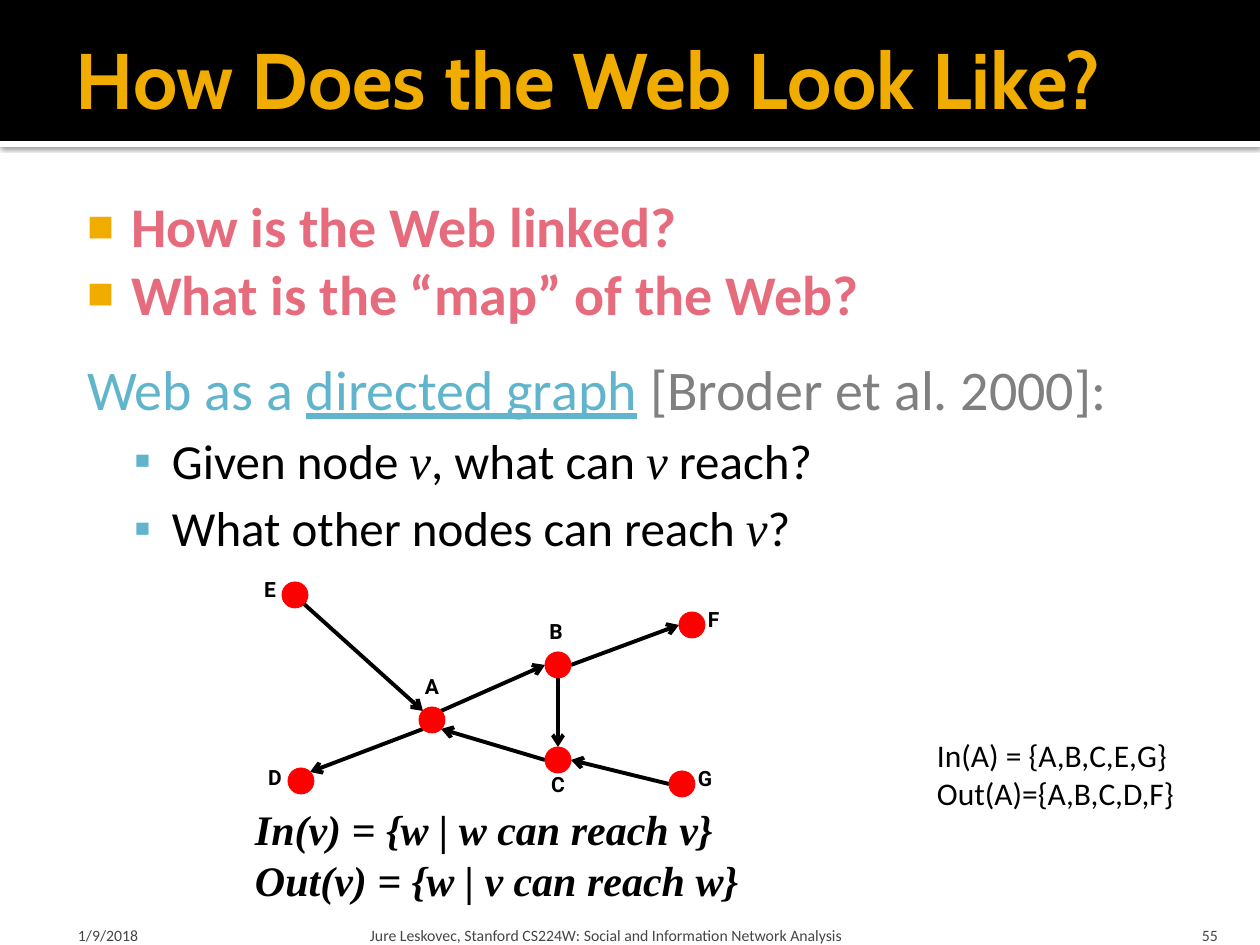
from dataclasses import dataclass
from math import cos, radians, sin

from lxml.etree import SubElement
from pptx import Presentation
from pptx.dml.color import RGBColor
from pptx.enum.shapes import MSO_CONNECTOR as Connector, MSO_SHAPE as Shape
from pptx.enum.text import MSO_ANCHOR as Anchor, MSO_AUTO_SIZE as AutoSize, PP_ALIGN as Align
from pptx.oxml.ns import qn
from pptx.util import Emu, Pt

PX = 914400 / 126
BLACK, WHITE, RED, GRAY = "000000", "FFFFFF", "FF0000", "808080"
GOLD, PINK, BLUE, FOOTER_GRAY = "F0AD00", "E66C7D", "60B5CC", "454545"
SANS, SERIF = "Calibri", "Times New Roman"
DIAMETER = 26
# Compass points on a node's rim, in degrees clockwise from east
EAST, SE, SOUTH, SW, WEST, NW, NORTH, NE = range(0, 360, 45)


@dataclass
class Span:
    text: str
    size: float
    color: str = BLACK
    font: str = SANS
    bold: bool = False
    italic: bool = False
    underline: bool = False


@dataclass
class Line:
    spans: list[Span]
    margin: int
    indent: int = 0
    before: float = 0
    bullet: str = ""
    bullet_color: str = GOLD
    bullet_percent: int = 100
    level: int = 0


@dataclass
class Node:
    x: int
    y: int
    label_x: int
    label_y: int
    label_width: int = 34

    def rim(self, angle: int) -> tuple[int, int]:
        radius = DIAMETER / 2
        return (round(self.x + radius * cos(radians(angle))),
                round(self.y + radius * sin(radians(angle))))


@dataclass
class Edge:
    start: str
    leave: int
    end: str
    enter: int


NODES = {
    "A": Node(432, 720, 415, 674),
    "B": Node(558, 665, 539, 619),
    "C": Node(558, 760, 541, 772),
    "D": Node(301, 781, 258, 765),
    "E": Node(295, 595, 253, 577),
    "F": Node(692, 625, 692, 607, 43),
    "G": Node(682, 784, 688, 766),
}
EDGES = [
    Edge("E", SE, "A", NW),
    Edge("A", NE, "B", WEST),
    Edge("B", SOUTH, "C", NORTH),
    Edge("C", WEST, "A", SE),
    Edge("G", WEST, "C", EAST),
    Edge("B", EAST, "F", WEST),
    Edge("A", SW, "D", NE),
]


def px(length: float) -> Emu:
    return Emu(round(length * PX))


def rgb(color: str) -> RGBColor:
    return RGBColor.from_string(color)


def place(shape, left: int, top: int, width: int, height: int) -> None:
    shape.left, shape.top, shape.width, shape.height = map(px, (left, top, width, height))


def set_frame(frame, insets: tuple, anchor=Anchor.TOP, wrap: bool = True) -> None:
    """Set left, top, right and bottom insets, anchoring and wrapping."""
    (frame.margin_left, frame.margin_top,
     frame.margin_right, frame.margin_bottom) = map(px, insets)
    frame.vertical_anchor = anchor
    frame.word_wrap = wrap
    frame.auto_size = AutoSize.NONE


def format_run(run, style: Span) -> None:
    font = run.font
    font.name, font.size = style.font, Pt(style.size)
    font.bold, font.italic, font.underline = style.bold, style.italic, style.underline
    font.color.rgb = rgb(style.color)


def write(frame, style: Span, align=Align.LEFT) -> None:
    frame.text = style.text
    for para in frame.paragraphs:
        para.alignment = align
        for run in para.runs:
            format_run(run, style)


def add_text(slide, bounds: tuple, style: Span, insets=(13, 6, 13, 6),
             align=Align.LEFT, anchor=Anchor.TOP, wrap: bool = True) -> None:
    box = slide.shapes.add_textbox(*map(px, bounds))
    set_frame(box.text_frame, insets, anchor, wrap)
    write(box.text_frame, style, align)


def write_line(para, line: Line) -> None:
    para.level = line.level
    para.alignment = Align.LEFT
    para.space_before = Pt(line.before)
    for span in line.spans:
        run = para.add_run()
        run.text = span.text
        format_run(run, span)
    props = para._p.get_or_add_pPr()
    props.set("marL", str(px(line.margin)))
    props.set("indent", str(px(line.indent)))
    if not line.bullet:
        SubElement(props, qn("a:buNone"))
        return
    color = SubElement(props, qn("a:buClr"))
    SubElement(color, qn("a:srgbClr"), val=line.bullet_color)
    SubElement(props, qn("a:buSzPct"), val=str(line.bullet_percent * 1000))
    SubElement(props, qn("a:buChar"), char=line.bullet)


def add_filled(slide, kind, bounds: tuple, color: str):
    shape = slide.shapes.add_shape(kind, *map(px, bounds))
    shape.shadow.inherit = False
    shape.fill.solid()
    shape.fill.fore_color.rgb = rgb(color)
    shape.line.fill.background()
    return shape


def add_header_bands(slide) -> None:
    """Draw the black band and its shadowed white edge behind the title."""
    edge = add_filled(slide, Shape.RECTANGLE, (0, 141, 1260, 6), WHITE)
    effects = edge._element.spPr.find(qn("a:effectLst"))
    shadow = SubElement(effects, qn("a:outerShdw"), blurRad=str(Pt(2.5)), dist=str(Pt(0.8)),
                        dir="5400000", algn="tl", rotWithShape="0")
    SubElement(SubElement(shadow, qn("a:srgbClr"), val=BLACK), qn("a:alpha"), val="60000")
    band = add_filled(slide, Shape.RECTANGLE, (0, 0, 1260, 141), BLACK)
    for position, shape in enumerate((edge, band), start=2):
        slide.shapes._spTree.insert(position, shape._element)


def add_edge(slide, edge: Edge) -> None:
    start, end = NODES[edge.start].rim(edge.leave), NODES[edge.end].rim(edge.enter)
    arrow = slide.shapes.add_connector(Connector.STRAIGHT, *map(px, start + end))
    arrow.line.color.rgb = rgb(BLACK)
    arrow.line.width = Pt(2.25)
    SubElement(arrow.line._get_or_add_ln(), qn("a:tailEnd"), type="arrow")
    SubElement(arrow._element.spPr, qn("a:effectLst"))


def add_node(slide, name: str, node: Node) -> None:
    add_text(slide, (node.label_x, node.label_y, node.label_width, 25),
             Span(name, 12, font="Roboto", bold=True), (4, 0, 4, 0), Align.CENTER)
    corner = (node.x - DIAMETER // 2, node.y - DIAMETER // 2)
    dot = add_filled(slide, Shape.OVAL, corner + (DIAMETER, DIAMETER), RED)
    dot.line.color.rgb = rgb(RED)
    dot.line.width = Pt(0.5)


def question(text: str) -> Line:
    return Line([Span(text, 32, PINK, bold=True)], 60, -44, bullet="■", bullet_percent=80)


def reach_item(*parts: str) -> Line:
    """Build a sub-bullet whose every second part is an italic variable."""
    spans = [Span(part, 28, font=SERIF if i % 2 else SANS, italic=bool(i % 2))
             for i, part in enumerate(parts)]
    return Line(spans, 101, -38, 5, "▪", BLUE, level=1)


def main() -> None:
    deck = Presentation()
    deck.slide_width, deck.slide_height = px(1260), px(945)
    slide = deck.slides.add_slide(deck.slide_layouts[1])
    add_header_bands(slide)

    title, body = slide.placeholders
    place(title, 63, 10, 1134, 136)
    set_frame(title.text_frame, (13, 6, 6, 6), Anchor.MIDDLE)
    write(title.text_frame, Span("How Does the Web Look Like?", 45, GOLD, "Cabin", bold=True))

    place(body, 63, 179, 1134, 510)
    set_frame(body.text_frame, (8, 13, 13, 6))
    lines = [
        question("How is the Web linked?"),
        question("What is the “map” of the Web?"),
        Line([Span("Web as a ", 32, BLUE), Span("directed graph", 32, BLUE, underline=True),
              Span(" ", 32, BLUE), Span("[Broder et al. 2000]:", 32, GRAY)], 16, before=16),
        reach_item("Given node ", "v", ", what can ", "v", " reach?"),
        reach_item("What other nodes can reach ", "v", "?"),
    ]
    frame = body.text_frame
    for i, line in enumerate(lines):
        write_line(frame.add_paragraph() if i else frame.paragraphs[0], line)

    for left, width, inset, text, align in (
        (63, 294, 15, "1/9/2018", Align.LEFT),
        (364, 759, 6, "Jure Leskovec, Stanford CS224W: Social and Information Network Analysis",
         Align.LEFT),
        (1130, 101, 13, "55", Align.RIGHT),
    ):
        add_text(slide, (left, 907, width, 38), Span(text, 9, FOOTER_GRAY),
                 (inset, 6, inset, 0), align, Anchor.BOTTOM)

    add_text(slide, (242, 798, 693, 115),
             Span("In(v) = {w | w can reach v}\vOut(v) = {w | v can reach w}", 24,
                  font=SERIF, bold=True, italic=True))
    for edge in EDGES:
        add_edge(slide, edge)
    for name, node in NODES.items():
        add_node(slide, name, node)
    add_text(slide, (924, 730, 265, 89),
             Span("In(A) = {A,B,C,E,G}\nOut(A)={A,B,C,D,F}", 18), wrap=False)

    deck.save("out.pptx")


if __name__ == "__main__":
    main()
